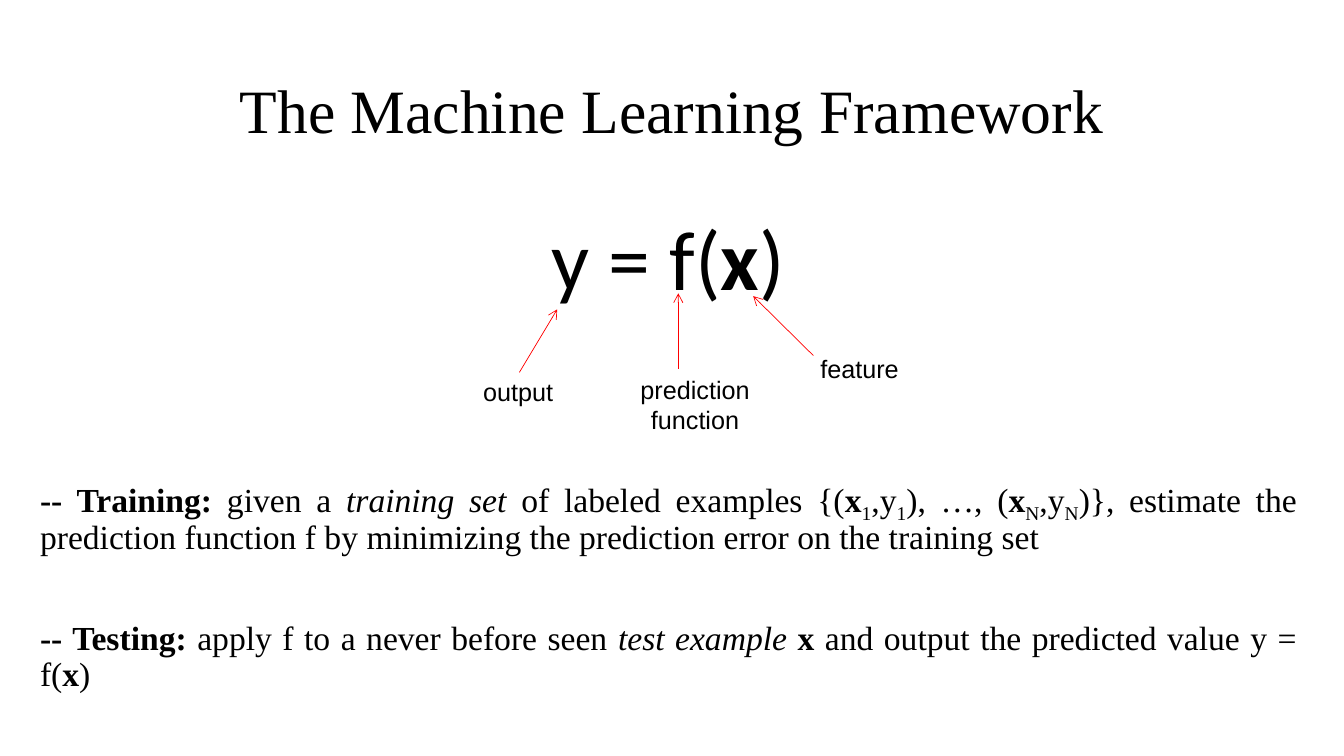
from lxml import etree
from pptx import Presentation
from pptx import util as u
from pptx.dml import color
from pptx.enum import shapes, text
from pptx.oxml import ns

COLORS = {"text": "000000", "arrow": "FF0000"}
SERIF, SANS, FORMULA = "Times New Roman", "Arial", "Calibri"

TRAINING = [
    ("-- Training: ", "b"), ("given a ", ""), ("training set ", "i"),
    ("of labeled examples {(", ""), ("x", "b"), ("1", "sub"), (",y", ""), ("1", "sub"),
    ("), …, (", ""), ("x", "b"), ("N", "sub"), (",y", ""), ("N", "sub"),
    (")}, estimate the prediction function f by minimizing the prediction error "
     "on the training set", ""),
]
TESTING = [
    ("-- Testing:", "b"), (" apply f to a never before seen ", ""),
    ("test example ", "i"), ("x", "b"),
    (" and output the predicted value y = f(", ""), ("x", "b"), (")", ""),
]

# Label text, label box, arrow start, arrow end; points within the diagram
CALLOUTS = [
    ("output", (0, 56.5, 65, 29), (33, 57), (60, 12)),
    ("prediction function", (84, 54.5, 149, 51), (146.5, 54.5), (146.5, 0.5)),
    ("feature", (193.5, 40, 165, 29), (243, 45), (200, 2.5)),
]


def add_text_box(slide, left, top, width, height, anchor=text.MSO_ANCHOR.TOP):
    box = slide.shapes.add_textbox(u.Pt(left), u.Pt(top), u.Pt(width), u.Pt(height))
    frame = box.text_frame
    frame.word_wrap = True
    frame.vertical_anchor = anchor
    return frame


def fill_paragraph(paragraph, runs, font, size, align, line_spacing=0.9, before=0):
    """Add (words, style) runs; a style is "", "b", "i" or "sub"."""
    paragraph.alignment = align
    paragraph.line_spacing = line_spacing
    paragraph.space_before = u.Pt(before)
    for words, style in runs:
        run = paragraph.add_run()
        run.text = words
        run.font.name = font
        run.font.size = u.Pt(size)
        run.font.bold = style == "b"
        run.font.italic = style == "i"
        run.font.color.rgb = color.RGBColor.from_string(COLORS["text"])
        if style == "sub":
            run._r.get_or_add_rPr().set("baseline", "-25000")


def add_arrow(slide, start, end):
    arrow = slide.shapes.add_connector(
        shapes.MSO_CONNECTOR.STRAIGHT, *(u.Pt(value) for value in (*start, *end)))
    arrow.line.color.rgb = color.RGBColor.from_string(COLORS["arrow"])
    arrow.line.width = u.Pt(0.5)
    etree.SubElement(arrow.line._get_or_add_ln(), ns.qn("a:tailEnd"), type="arrow")
    etree.SubElement(arrow._element.spPr, ns.qn("a:effectLst"))


def add_title(slide, left, top, width, height):
    frame = add_text_box(slide, left, top, width, height, text.MSO_ANCHOR.MIDDLE)
    fill_paragraph(frame.paragraphs[0], [("The Machine Learning Framework", "")],
                   SERIF, 44, text.PP_ALIGN.CENTER)


def add_body(slide, left, top, width, height):
    """Formula on top, then the two phases, spaced to leave room for the callouts."""
    frame = add_text_box(slide, left, top, width, height)
    fill_paragraph(frame.paragraphs[0], [("y = f(", ""), ("x", "b"), (")", "")],
                   FORMULA, 60, text.PP_ALIGN.CENTER)
    for runs, before in ((TRAINING, 122), (TESTING, 46)):
        fill_paragraph(frame.add_paragraph(), runs, SERIF, 24,
                       text.PP_ALIGN.JUSTIFY, before=before)


def add_callouts(slide, left, top):
    for words, (x, y, width, height), start, end in CALLOUTS:
        add_arrow(slide, (left + start[0], top + start[1]), (left + end[0], top + end[1]))
        frame = add_text_box(slide, left + x, top + y, width, height)
        frame.word_wrap = " " in words or words == "feature"
        frame.auto_size = text.MSO_AUTO_SIZE.SHAPE_TO_FIT_TEXT
        align = text.PP_ALIGN.CENTER if frame.word_wrap else text.PP_ALIGN.LEFT
        fill_paragraph(frame.paragraphs[0], [(words, "")], SANS, 18, align, 1.0)


def main():
    presentation = Presentation()
    presentation.slide_width = u.Pt(960)
    presentation.slide_height = u.Pt(540)
    slide = presentation.slides.add_slide(presentation.slide_layouts[6])
    add_title(slide, 66, 29, 828, 104)
    add_body(slide, 21.5, 152, 912, 356)
    add_callouts(slide, 338, 209)
    presentation.save("out.pptx")


if __name__ == "__main__":
    main()
